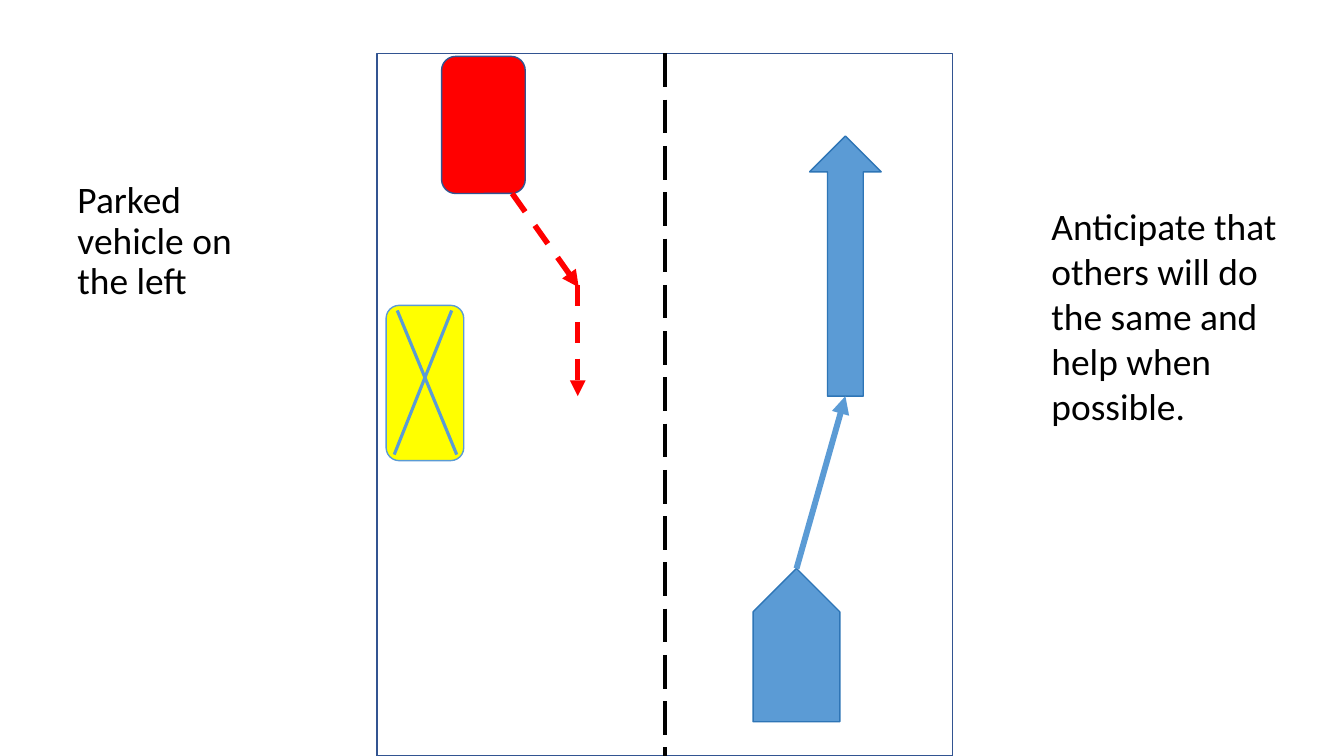
from pptx import Presentation
from pptx.dml.color import RGBColor
from pptx.enum.dml import MSO_LINE_DASH_STYLE as DASH
from pptx.enum.shapes import MSO_CONNECTOR, MSO_SHAPE as SHAPE
from pptx.oxml.ns import qn
from pptx.util import Pt
from lxml.etree import SubElement

PX = 9144  # EMU per px, 100 px to the inch
THEME = {
    "font": "Calibri", "size": 26.7, "text": "000000",
    "white": "FFFFFF", "black": "000000", "red": "FF0000", "yellow": "FFFF00",
    "blue": "5B9BD5", "blue_edge": "2E75B6", "navy": "325491",
}


def color(name):
    return RGBColor.from_string(THEME[name])


def add_text(text, left, top, width, height, spacing=1.0):
    box = slide.shapes.add_textbox(left * PX, top * PX, width * PX, height * PX)
    box.text_frame.word_wrap = True
    paragraph = box.text_frame.paragraphs[0]
    paragraph.text = text
    paragraph.line_spacing = spacing
    paragraph.font.name = THEME["font"]
    paragraph.font.size = Pt(THEME["size"])
    paragraph.font.color.rgb = color("text")


prs = Presentation()
prs.slide_width, prs.slide_height = 1333 * PX, 750 * PX
slide = prs.slides.add_slide(prs.slide_layouts[6])

# Captions on both sides of the road
add_text("Parked vehicle on the left", 67, 175, 211, 178, spacing=0.9)
add_text("Anticipate that others will do the same and help when possible.",
         1033, 197, 278, 235)

# Road, vehicles and the way ahead
scene = {}
for part, kind, left, top, width, height, turn, fill, edge in [
    ("road", SHAPE.RECTANGLE, 374, 53, 571, 697, 0, "white", "navy"),
    ("parked", SHAPE.ROUNDED_RECTANGLE, 383, 303, 77, 154, 0, "yellow", "blue"),
    ("oncoming", SHAPE.ROUNDED_RECTANGLE, 438, 56, 83, 136, 0, "red", "navy"),
    ("own", SHAPE.PENTAGON, 714, 597, 152, 86, 270, "blue", "blue_edge"),
    ("ahead", SHAPE.UP_ARROW, 803, 135, 71, 258, 0, "blue", "blue_edge"),
]:
    body = slide.shapes.add_shape(kind, left * PX, top * PX, width * PX, height * PX)
    body.rotation = turn
    body.shadow.inherit = False
    body.fill.solid()
    body.fill.fore_color.rgb = color(fill)
    body.line.color.rgb = color(edge)
    body.line.width = Pt(1)
    scene[part] = body

# Lane divider, paths of travel and the cross on the parked vehicle
routes = {}
for part, x1, y1, x2, y2, stroke, weight, dash, arrow in [
    ("divider", 659, 53, 659, 750, "black", 3, DASH.LONG_DASH, False),
    ("swerve", 508, 192, 574, 285, "red", 4, DASH.DASH, True),
    ("pass", 573, 283, 573, 393, "red", 3.75, DASH.DASH, True),
    ("give way", 790, 564, 839, 393, "blue", 4.25, None, True),
    ("cross down left", 448, 308, 391, 451, "blue", 2.25, None, False),
    ("cross down right", 394, 308, 453, 451, "blue", 2.25, None, False),
]:
    route = slide.shapes.add_connector(
        MSO_CONNECTOR.STRAIGHT, x1 * PX, y1 * PX, x2 * PX, y2 * PX)
    route.line.color.rgb = color(stroke)
    route.line.width = Pt(weight)
    if dash is not None:
        route.line.dash_style = dash
    if arrow:
        SubElement(route.line._get_or_add_ln(), qn("a:tailEnd"), type="triangle")
    SubElement(route._element.spPr, qn("a:effectLst"))
    routes[part] = route

# Joins
routes["divider"].begin_connect(scene["road"], 0)
routes["divider"].end_connect(scene["road"], 2)
routes["give way"].end_connect(scene["ahead"], 2)

prs.save("out.pptx")
